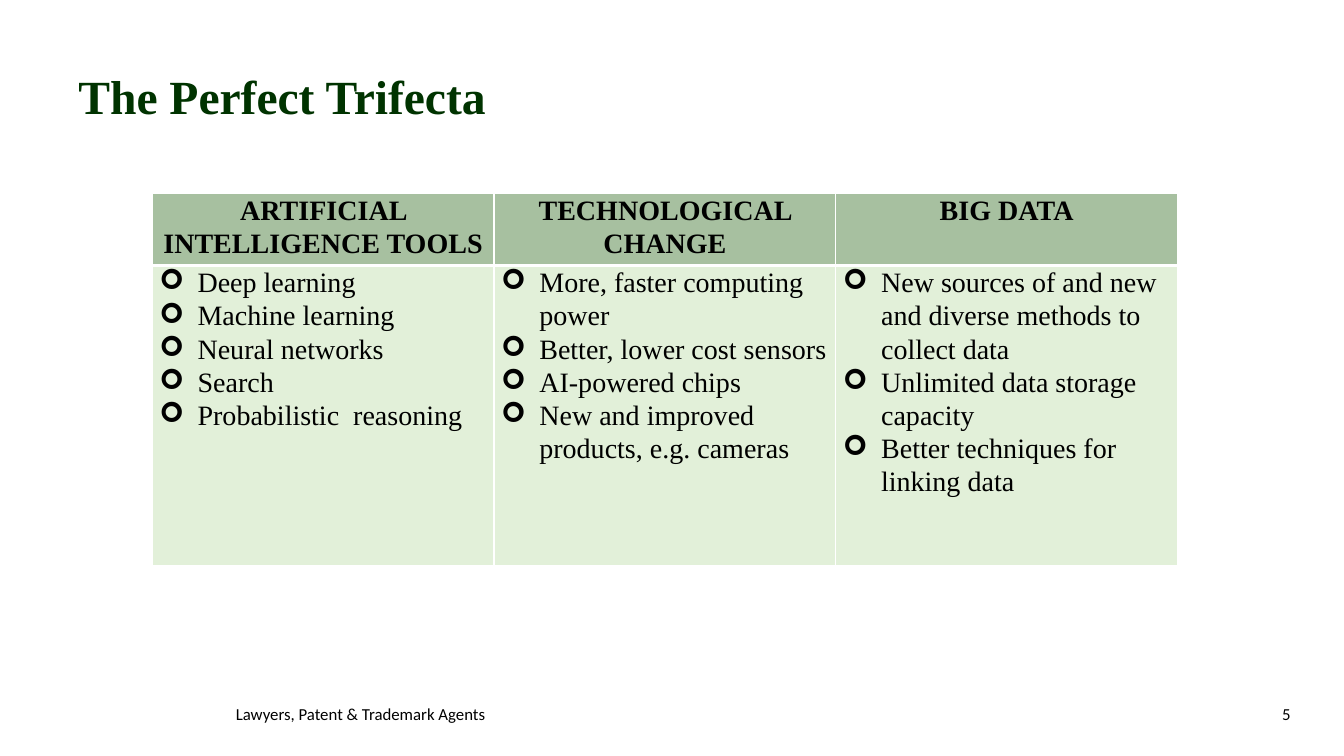
from dataclasses import dataclass

from lxml import etree
from pptx import Presentation
from pptx import util as u
from pptx.dml.color import RGBColor
from pptx.enum import text
from pptx.oxml import ns

PX = 9144  # EMU per px, 100 px to the inch

BLACK = RGBColor(0x00, 0x00, 0x00)
WHITE = RGBColor(0xFF, 0xFF, 0xFF)
DARK_GREEN = RGBColor(0x00, 0x33, 0x00)
SAGE = RGBColor(0xA7, 0xC0, 0xA0)
PALE_GREEN = RGBColor(0xE2, 0xF0, 0xD9)

SERIF = "Times New Roman"
SANS = "Calibri"
LEFT, CENTER, RIGHT = (text.PP_ALIGN.LEFT, text.PP_ALIGN.CENTER,
                       text.PP_ALIGN.RIGHT)


@dataclass(frozen=True)
class Pillar:
    heading: str
    points: tuple[str, ...]


@dataclass(frozen=True)
class Label:
    wording: str
    left: int
    top: int
    width: int
    height: int
    size: int = 12
    font: str = SANS
    color: RGBColor = BLACK
    bold: bool = False
    align: text.PP_ALIGN = LEFT
    spacing: float = 1.0


PILLARS = (
    Pillar("ARTIFICIAL INTELLIGENCE TOOLS",
           ("Deep learning", "Machine learning", "Neural networks", "Search",
            "Probabilistic  reasoning")),
    Pillar("TECHNOLOGICAL CHANGE",
           ("More, faster computing power", "Better, lower cost sensors",
            "AI-powered chips", "New and improved products, e.g. cameras")),
    Pillar("BIG DATA",
           ("New sources of and new and diverse methods to collect data",
            "Unlimited data storage capacity",
            "Better techniques for linking data")),
)

LABELS = (
    Label("The Perfect Trifecta", 68, 63, 953, 70, size=34, font=SERIF,
          color=DARK_GREEN, bold=True, spacing=0.9),
    Label("Lawyers, Patent & Trademark Agents", 224, 693, 336, 30),
    Label("5", 954, 693, 336, 30, align=RIGHT),
)


def px(length: int) -> u.Emu:
    return u.Emu(length * PX)


def add_bullet(paragraph, indent: int = 38) -> None:
    properties = paragraph._p.get_or_add_pPr()
    properties.set("marL", str(px(indent)))
    properties.set("indent", str(-px(indent)))
    etree.SubElement(properties, ns.qn("a:buFont"), typeface="Wingdings")
    etree.SubElement(properties, ns.qn("a:buChar"), char="➢")


def write(frame, *lines: str, size: int = 20, font: str = SERIF,
          color: RGBColor = BLACK, bold: bool = False,
          align: text.PP_ALIGN = LEFT, spacing: float = 1.07,
          bulleted: bool = False) -> None:
    for number, line in enumerate(lines):
        paragraph = frame.add_paragraph() if number else frame.paragraphs[0]
        if bulleted:
            add_bullet(paragraph)
        paragraph.alignment = align
        paragraph.line_spacing = spacing
        run = paragraph.add_run()
        run.text = line
        run.font.size = u.Pt(size)
        run.font.name = font
        run.font.bold = bold
        run.font.color.rgb = color


def add_label(slide, label: Label) -> None:
    frame = slide.shapes.add_textbox(
        px(label.left), px(label.top), px(label.width), px(label.height)
    ).text_frame
    frame.word_wrap = True
    frame.vertical_anchor = text.MSO_ANCHOR.MIDDLE
    write(frame, label.wording, size=label.size, font=label.font,
          color=label.color, bold=label.bold, align=label.align,
          spacing=label.spacing)


def style_cell(cell, fill: RGBColor, top: int = 1, bottom: int = 1) -> None:
    cell.margin_left = cell.margin_right = px(7)
    cell.margin_top = cell.margin_bottom = 0
    properties = cell._tc.get_or_add_tcPr()
    for side, points in (("L", 1), ("R", 1), ("T", top), ("B", bottom)):
        border = etree.SubElement(properties, ns.qn(f"a:ln{side}"),
                                  w=str(u.Pt(points)))
        solid = etree.SubElement(border, ns.qn("a:solidFill"))
        etree.SubElement(solid, ns.qn("a:srgbClr"), val=str(WHITE))
    cell.fill.solid()
    cell.fill.fore_color.rgb = fill


def add_pillars(slide) -> None:
    table = slide.shapes.add_table(2, len(PILLARS), px(151), px(192),
                                   px(1017), px(362)).table
    table.rows[0].height, table.rows[1].height = px(64), px(298)
    for column, pillar in enumerate(PILLARS):
        table.columns[column].width = px(339)
        heading, points = table.cell(0, column), table.cell(1, column)
        style_cell(heading, SAGE, bottom=3)
        style_cell(points, PALE_GREEN, top=3)
        write(heading.text_frame, pillar.heading, bold=True, align=CENTER)
        write(points.text_frame, *pillar.points, bulleted=True)


def main() -> None:
    deck = Presentation()
    deck.slide_width, deck.slide_height = px(1333), px(750)
    slide = deck.slides.add_slide(deck.slide_layouts[6])

    # Title, footer and page number
    for label in LABELS:
        add_label(slide, label)

    # Three-column table
    add_pillars(slide)
    deck.save("out.pptx")


if __name__ == "__main__":
    main()
